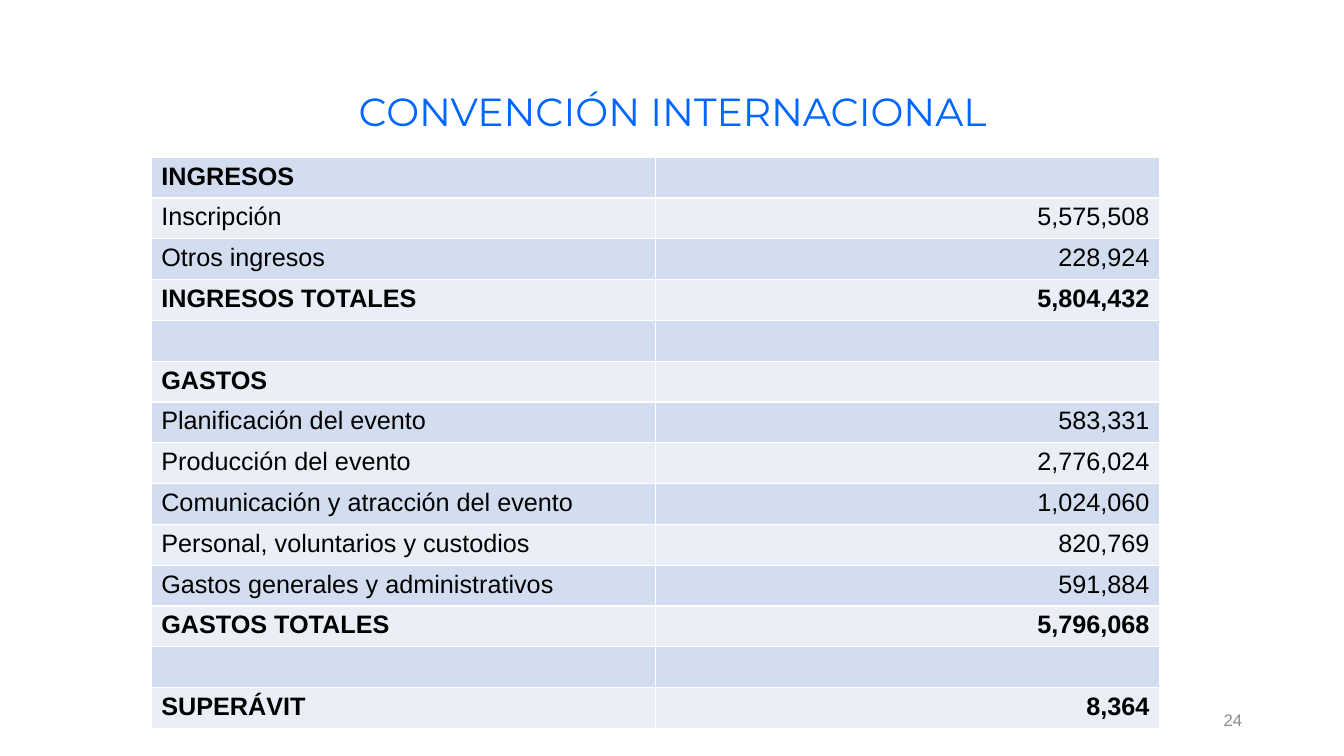
from lxml import etree
from pptx import Presentation
from pptx import util as u
from pptx.dml.color import RGBColor
from pptx.enum import text
from pptx.oxml import ns

PX = 9144  # EMU per px, 100 px to the inch
ALIGN = text.PP_ALIGN
BANDS = ("D2DEEF", "EAEFF7")

# label, amount, bold
ROWS = [
    ("INGRESOS", "", True),
    ("Inscripción", "5,575,508", False),
    ("Otros ingresos", "228,924", False),
    ("INGRESOS TOTALES", "5,804,432", True),
    ("", "", False),
    ("GASTOS", "", True),
    ("Planificación del evento", "583,331", False),
    ("Producción del evento", "2,776,024", False),
    ("Comunicación y atracción del evento", "1,024,060", False),
    ("Personal, voluntarios y custodios", "820,769", False),
    ("Gastos generales y administrativos", "591,884", False),
    ("GASTOS TOTALES", "5,796,068", True),
    ("", "", False),
    ("SUPERÁVIT", "8,364", True),
]


def color(code):
    return RGBColor.from_string(code)


def emu(box):
    return [u.Emu(n * PX) for n in box]


def write(par, words, size, font, code, align, bold=False):
    par.alignment = align
    par.font.size = u.Pt(size)
    if not words:
        return
    run = par.add_run()
    run.text = words
    run.font.size = u.Pt(size)
    run.font.name = font
    run.font.bold = bold
    run.font.color.rgb = color(code)


def label(slide, box, words, size, font, code, align):
    frame = slide.shapes.add_textbox(*emu(box)).text_frame
    frame.word_wrap = True
    frame.vertical_anchor = text.MSO_ANCHOR.MIDDLE
    par = frame.paragraphs[0]
    par.line_spacing = 0.9
    write(par, words, size, font, code, align)


def border(cell, code, width):
    props = cell._tc.get_or_add_tcPr()
    for side in ("lnL", "lnR", "lnT", "lnB"):
        line = etree.SubElement(props, ns.qn("a:" + side), w=str(u.Pt(width)))
        fill = etree.SubElement(line, ns.qn("a:solidFill"))
        etree.SubElement(fill, ns.qn("a:srgbClr"), val=code)


def budget(slide, box):
    # Columns and rows share the box equally
    table = slide.shapes.add_table(len(ROWS), 2, *emu(box)).table
    table.first_row = table.horz_banding = False
    for i, (name, amount, bold) in enumerate(ROWS):
        pairs = ((name, ALIGN.LEFT), (amount, ALIGN.RIGHT))
        for j, (words, align) in enumerate(pairs):
            cell = table.cell(i, j)
            border(cell, "FFFFFF", 1)
            cell.fill.solid()
            cell.fill.fore_color.rgb = color(BANDS[i % 2])
            par = cell.text_frame.paragraphs[0]
            write(par, words, 18, "Arial", "000000", align, bold)


def main():
    deck = Presentation()
    deck.slide_width, deck.slide_height = emu((1333, 750))
    slide = deck.slides.add_slide(deck.slide_layouts[6])
    # Title
    label(slide, (92, 40, 1150, 145), "CONVENCIÓN INTERNACIONAL",
          28, "Montserrat", "0066FF", ALIGN.CENTER)
    # Slide number
    label(slide, (942, 695, 300, 40), "24", 12, "Arial", "8C8C8C", ALIGN.RIGHT)
    # Income and expenses
    budget(slide, (150, 156, 1000, 567))
    deck.save("out.pptx")


if __name__ == "__main__":
    main()
